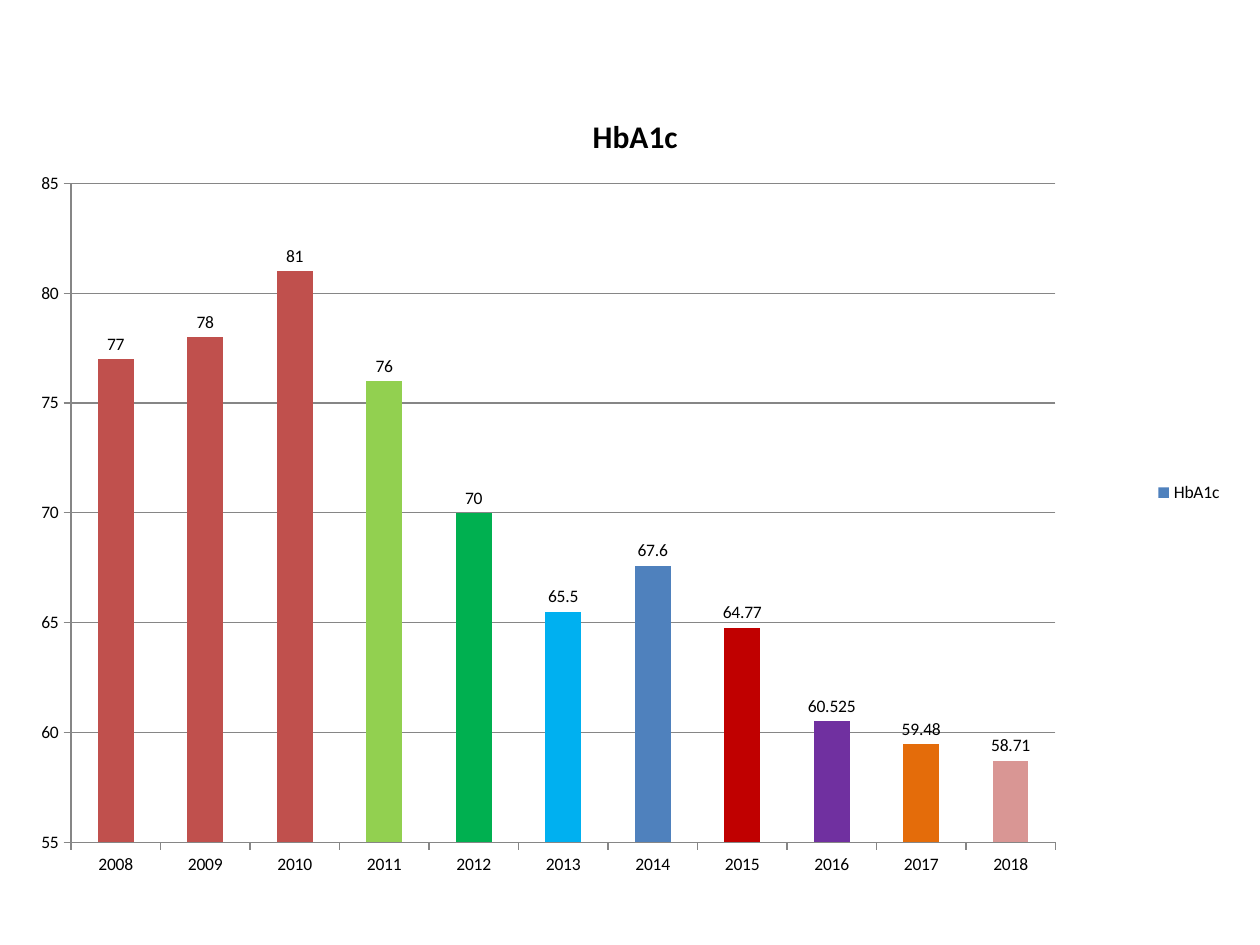
from dataclasses import dataclass

from lxml import etree
from pptx import Presentation
from pptx.chart.data import CategoryChartData
from pptx.dml.color import RGBColor
from pptx.enum.chart import XL_CHART_TYPE, XL_LABEL_POSITION, XL_LEGEND_POSITION, XL_TICK_MARK
from pptx.oxml.ns import qn
from pptx.util import Pt

COLUMNS = XL_CHART_TYPE.COLUMN_CLUSTERED
ABOVE_BAR = XL_LABEL_POSITION.OUTSIDE_END
LEGEND_RIGHT = XL_LEGEND_POSITION.RIGHT
TICK_OUT = XL_TICK_MARK.OUTSIDE
TICK_NONE = XL_TICK_MARK.NONE


@dataclass(frozen=True)
class Theme:
    font: str = "Calibri"
    text: str = "000000"
    axis: str = "868686"
    series: str = "4F81BD"
    body_size: float = 10
    title_size: float = 18
    line_width: float = 0.75


THEME = Theme()
MEASURE = "HbA1c"
YEARLY_VALUES = [
    ("2008", 77, "C0504D"),
    ("2009", 78, "C0504D"),
    ("2010", 81, "C0504D"),
    ("2011", 76, "92D050"),
    ("2012", 70, "00B050"),
    ("2013", 65.5, "00B0F0"),
    ("2014", 67.6, THEME.series),
    ("2015", 64.77, "C00000"),
    ("2016", 60.525, "7030A0"),
    ("2017", 59.48, "E46C0A"),
    ("2018", 58.71, "D99694"),
]


def style_font(font, size=THEME.body_size, color=THEME.text, bold=False):
    font.name = THEME.font
    font.size = Pt(size)
    font.bold = bold
    font.color.rgb = RGBColor.from_string(color)


def write_text(frame, text, **font_format):
    para = frame.paragraphs[0]
    span = para.add_run()
    span.text = text
    style_font(span.font, **font_format)


def paint(fill, color):
    fill.solid()
    fill.fore_color.rgb = RGBColor.from_string(color)


def style_line(line):
    line.color.rgb = RGBColor.from_string(THEME.axis)
    line.width = Pt(THEME.line_width)


def style_axis(axis):
    axis.major_tick_mark = TICK_OUT
    axis.minor_tick_mark = TICK_NONE
    style_line(axis.format.line)


def style_value_axis(axis, minimum, maximum, step):
    style_axis(axis)
    axis.minimum_scale = minimum
    axis.maximum_scale = maximum
    axis.major_unit = step
    axis.has_major_gridlines = True
    style_line(axis.major_gridlines.format.line)


def color_bars(series):
    paint(series.format.fill, THEME.series)
    for index, (_, _, color) in enumerate(YEARLY_VALUES):
        if color != THEME.series:
            paint(series.points[index].format.fill, color)


def label_bars(plot):
    plot.has_data_labels = True
    labels = plot.data_labels
    labels.show_value = True
    labels.number_format = "General"
    labels.number_format_is_linked = False
    labels.position = ABOVE_BAR
    style_font(labels.font)


def place_plot(chart, **fractions):
    plot_area = chart.element.find(".//" + qn("c:plotArea"))
    for old_layout in plot_area.findall(qn("c:layout")):
        plot_area.remove(old_layout)
    layout = etree.Element(qn("c:layout"))
    manual = etree.SubElement(layout, qn("c:manualLayout"))
    settings = {"layoutTarget": "inner", "xMode": "edge", "yMode": "edge", **fractions}
    for name, value in settings.items():
        etree.SubElement(manual, qn("c:" + name)).set("val", str(value))
    plot_area.insert(0, layout)


def add_column_chart(page, left, top, width, height):
    data = CategoryChartData()
    data.categories = [year for year, _, _ in YEARLY_VALUES]
    data.add_series(MEASURE, [value for _, value, _ in YEARLY_VALUES])
    frame = page.shapes.add_chart(COLUMNS, Pt(left), Pt(top), Pt(width), Pt(height), data)
    chart = frame.chart
    style_font(chart.font)

    chart.has_title = True
    write_text(chart.chart_title.text_frame, MEASURE, size=THEME.title_size, bold=True)
    chart.chart_title.include_in_layout = False
    chart.has_legend = True
    chart.legend.position = LEGEND_RIGHT
    chart.legend.include_in_layout = False

    style_axis(chart.category_axis)
    style_value_axis(chart.value_axis, minimum=55, maximum=85, step=5)

    plot = chart.plots[0]
    plot.gap_width = 150
    plot.vary_by_categories = False
    color_bars(plot.series[0])
    label_bars(plot)
    place_plot(chart, x=0.03, y=0.12, w=0.82, h=0.81)


def main():
    deck = Presentation()
    deck.slide_width = Pt(720)
    deck.slide_height = Pt(540)
    page = deck.slides.add_slide(deck.slide_layouts[6])
    add_column_chart(page, left=20, top=49, width=686, height=465)
    deck.save("out.pptx")


if __name__ == "__main__":
    main()
